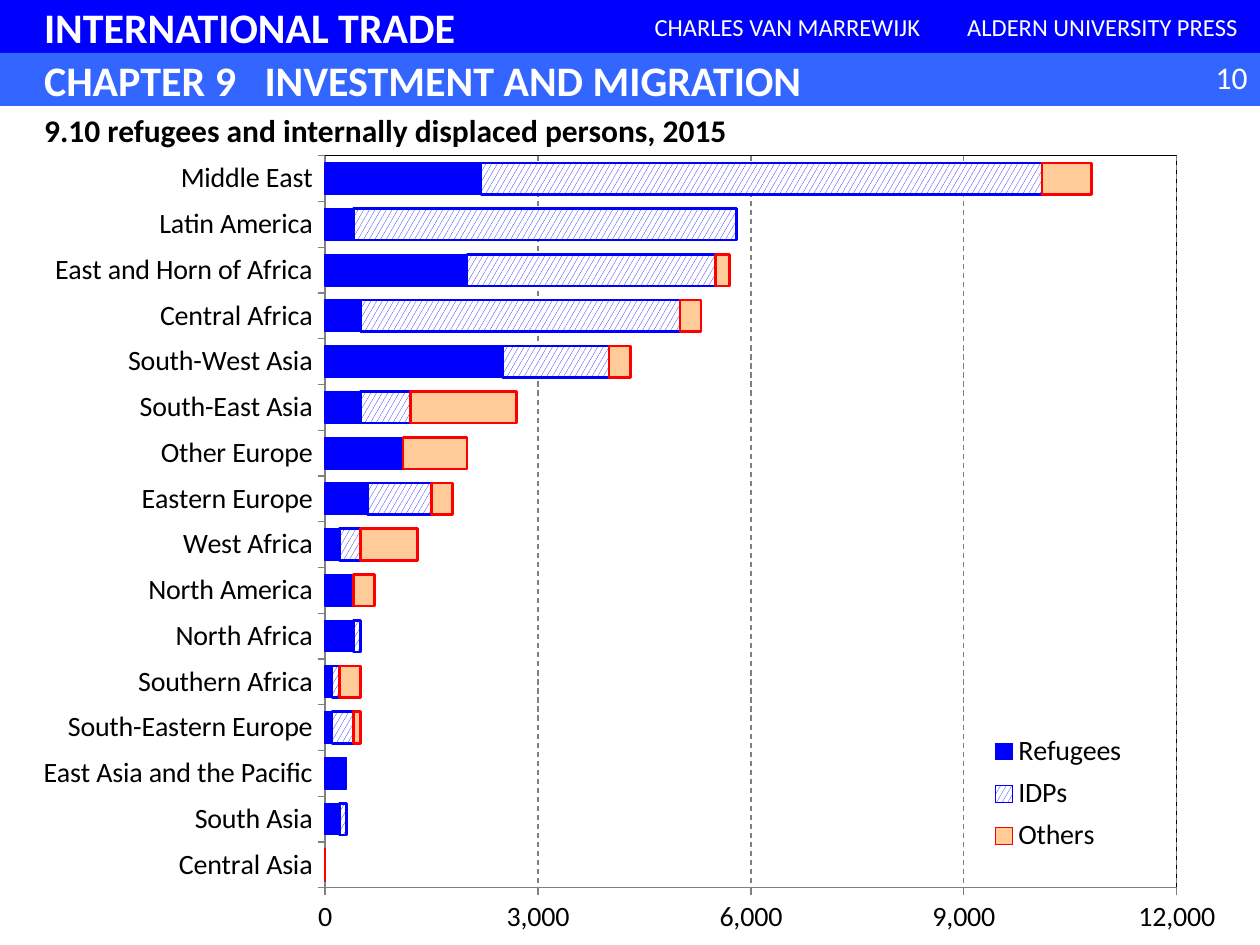
from lxml.etree import SubElement
from pptx import Presentation
from pptx.chart.data import CategoryChartData
from pptx.dml.color import RGBColor
from pptx.enum.chart import XL_CHART_TYPE as ChartType, XL_LEGEND_POSITION as LegendPosition, XL_TICK_MARK as TickMark
from pptx.enum.dml import MSO_LINE, MSO_PATTERN
from pptx.enum.shapes import MSO_SHAPE
from pptx.enum.text import MSO_ANCHOR, MSO_AUTO_SIZE, PP_ALIGN
from pptx.oxml import parse_xml
from pptx.oxml.ns import nsdecls, qn
from pptx.util import Inches, Pt

FONT = "Calibri"
COLORS = {"blue": "0000FF", "sky": "3366FF", "white": "FFFFFF", "black": "000000",
          "gray": "808080", "peach": "FFCC99", "red": "FF0000"}
TITLE = "9.10 refugees and internally displaced persons, 2015"
LEFT, CENTER, RIGHT = PP_ALIGN.LEFT, PP_ALIGN.CENTER, PP_ALIGN.RIGHT
BANNERS = [
    ("INTERNATIONAL TRADE", (0, 0, 10, 0.42), "blue", 24, True, LEFT, 0.35),
    ("CHARLES VAN MARREWIJK", (5, 0, 2.5, 0.42), "blue", 14, False, CENTER, 0.1),
    ("ALDERN UNIVERSITY PRESS", (7.5, 0.01, 2.5, 0.41), "blue", 14, False, CENTER, 0.1),
    ("CHAPTER 9\tINVESTMENT AND MIGRATION", (0, 0.42, 10, 0.42), "sky", 24, True, LEFT, 0.35),
]
PAGE_NUMBER = ("10", (9.33, 0.41, 0.67, 0.4))
REGIONS = [
    ("Central Asia", 0, 0, 0),
    ("South Asia", 200, 100, 0),
    ("East Asia and the Pacific", 300, 0, 0),
    ("South-Eastern Europe", 100, 300, 100),
    ("Southern Africa", 100, 100, 300),
    ("North Africa", 400, 100, 0),
    ("North America", 400, 0, 300),
    ("West Africa", 200, 300, 800),
    ("Eastern Europe", 600, 900, 300),
    ("Other Europe", 1100, 0, 900),
    ("South-East Asia", 500, 700, 1500),
    ("South-West Asia", 2500, 1500, 300),
    ("Central Africa", 500, 4500, 300),
    ("East and Horn of Africa", 2000, 3500, 200),
    ("Latin America", 400, 5400, 0),
    ("Middle East", 2200, 7900, 700),
]
SERIES = [("Refugees", "blue", "blue", 0.75), ("IDPs", None, "blue", 1.5), ("Others", "peach", "red", 1.5)]
PLOT_LAYOUT = (0.258, 0.061, 0.676, 0.871)
LEGEND_LAYOUT = (0.77, 0.74, 0.14, 0.16)


def color(name):
    return RGBColor.from_string(COLORS[name])


def set_font(font, size, name, bold=False):
    font.name, font.size, font.bold = FONT, Pt(size), bold
    font.color.rgb = color(name)


def place(shape, box):
    shape.left, shape.top, shape.width, shape.height = map(Inches, box)


def add_banner(slide, text, box, fill, size, bold, alignment, inset):
    shape = slide.shapes.add_shape(MSO_SHAPE.RECTANGLE, *map(Inches, box))
    shape.shadow.inherit = False
    shape.fill.solid()
    shape.fill.fore_color.rgb = color(fill)
    shape.line.fill.background()
    frame = shape.text_frame
    frame.text, frame.margin_left, frame.vertical_anchor = text, Inches(inset), MSO_ANCHOR.MIDDLE
    paragraph = frame.paragraphs[0]
    paragraph.alignment = alignment
    set_font(paragraph.font, size, "white", bold)
    if "\t" in text:
        tabs = SubElement(paragraph._p.get_or_add_pPr(), qn("a:tabLst"))
        paragraph._p.pPr.insert(0, tabs)
        SubElement(tabs, qn("a:tab"), pos=str(Inches(1.75)), algn="l")


def manual_layout(box, inner=False):
    target = '<c:layoutTarget val="inner"/>' if inner else ""
    modes = '<c:xMode val="edge"/><c:yMode val="edge"/>'
    sizes = "".join(f'<c:{key} val="{value}"/>' for key, value in zip("xywh", box))
    return parse_xml(f'<c:layout {nsdecls("c")}><c:manualLayout>{target}{modes}{sizes}</c:manualLayout></c:layout>')


def set_layout(element, layout, position):
    for old in element.findall(qn("c:layout")):
        element.remove(old)
    element.insert(position, layout)


def add_refugee_chart(slide):
    data = CategoryChartData(number_format="#,##0")
    names, *columns = zip(*REGIONS)
    data.categories = names
    for (name, *_), values in zip(SERIES, columns):
        data.add_series(name, values)
    box = map(Inches, (0, 0.83, 10, 6.67))
    chart = slide.shapes.add_chart(ChartType.BAR_STACKED, *box, data).chart
    set_font(chart.font, 16, "black")
    chart.has_title = False
    plot = chart.plots[0]
    plot.gap_width, plot.overlap, plot.vary_by_categories = 45, 100, False

    for series, (_, fill, line, width) in zip(plot.series, SERIES):
        area = series.format.fill
        if fill:
            area.solid()
            area.fore_color.rgb = color(fill)
        else:
            area.patterned()
            area.pattern = MSO_PATTERN.LARGE_CONFETTI
            area.fore_color.rgb, area.back_color.rgb = color("blue"), color("white")
        series.format.line.color.rgb = color(line)
        series.format.line.width = Pt(width)

    axis = chart.value_axis
    axis.minimum_scale, axis.maximum_scale, axis.major_unit = 0, 12000, 3000
    axis.tick_labels.number_format, axis.tick_labels.number_format_is_linked = "#,##0", False
    axis.has_major_gridlines = True
    grid = axis.major_gridlines.format.line
    grid.color.rgb, grid.width, grid.dash_style = color("gray"), Pt(0.75), MSO_LINE.DASH
    for axis in (chart.category_axis, chart.value_axis):
        axis.major_tick_mark = TickMark.OUTSIDE
        axis.format.line.color.rgb = color("gray")
        set_font(axis.tick_labels.font, 16, "black")

    chart.has_legend = True
    legend = chart.legend
    legend.position, legend.include_in_layout = LegendPosition.RIGHT, False
    set_font(legend.font, 16, "black")
    set_layout(legend._element, manual_layout(LEGEND_LAYOUT), 1)
    plot_area = chart._chartSpace.chart.plotArea
    set_layout(plot_area, manual_layout(PLOT_LAYOUT, inner=True), 0)
    plot_area.append(parse_xml(
        f'<c:spPr {nsdecls("c", "a")}><a:noFill/><a:ln w="9525"><a:solidFill>'
        f'<a:srgbClr val="{COLORS["black"]}"/></a:solidFill></a:ln></c:spPr>'))


def format_text(shape, text, box, size, name, bold, alignment):
    place(shape, box)
    frame = shape.text_frame
    frame.text, frame.word_wrap, frame.auto_size = text, True, MSO_AUTO_SIZE.NONE
    frame.vertical_anchor = MSO_ANCHOR.TOP
    frame.paragraphs[0].alignment = alignment
    set_font(frame.paragraphs[0].font, size, name, bold)


def main():
    """Build the refugees and displaced persons slide."""
    presentation = Presentation()
    presentation.slide_width, presentation.slide_height = Inches(10), Inches(7.5)
    slide = presentation.slides.add_slide(presentation.slide_layouts[5])
    for banner in BANNERS:
        add_banner(slide, *banner)
    text, box = PAGE_NUMBER
    number = slide.shapes.add_textbox(*map(Inches, box))
    format_text(number, text, box, 18, "white", False, RIGHT)
    add_refugee_chart(slide)
    title = slide.shapes.title
    format_text(title, TITLE, (0.25, 0.83, 9.75, 0.4), 18, "black", True, LEFT)
    slide.shapes._spTree.append(title._element)
    presentation.save("out.pptx")


if __name__ == "__main__":
    main()
